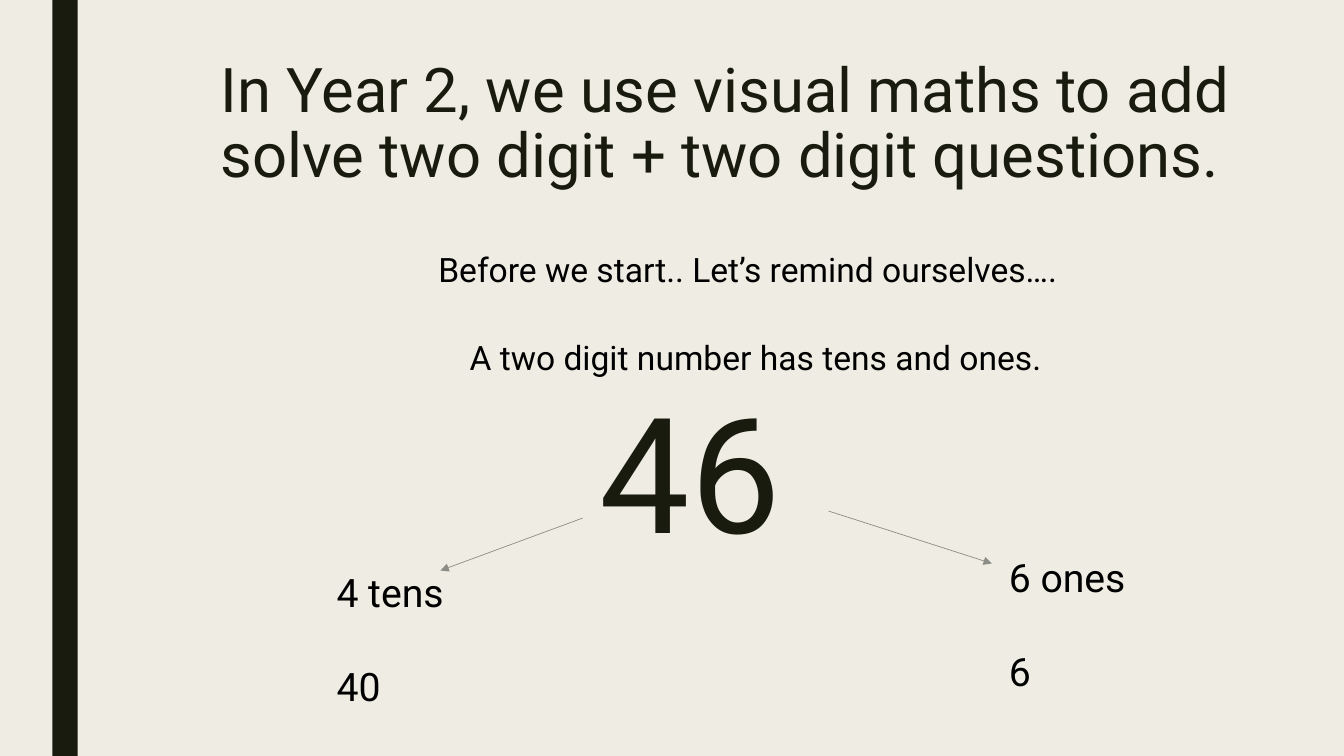
from dataclasses import dataclass

from lxml import etree
from pptx import Presentation
from pptx.dml.color import RGBColor
from pptx.enum.shapes import MSO_CONNECTOR, MSO_SHAPE
from pptx.enum.text import MSO_ANCHOR, PP_ALIGN
from pptx.oxml.ns import qn
from pptx.util import Pt

RECT = MSO_SHAPE.RECTANGLE
STRAIGHT = MSO_CONNECTOR.STRAIGHT
TOP = MSO_ANCHOR.TOP
LEFT = PP_ALIGN.LEFT


@dataclass(frozen=True)
class Theme:
    font: str = "Roboto"
    paper: RGBColor = RGBColor(0xEF, 0xED, 0xE3)
    dark: RGBColor = RGBColor(0x19, 0x1B, 0x0E)
    body: RGBColor = RGBColor(0x00, 0x00, 0x00)
    arrow: RGBColor = RGBColor(0x8C, 0x8D, 0x86)
    title_size: float = 44
    number_size: float = 115
    sentence_size: float = 24
    part_size: float = 28


THEME = Theme()
SLIDE_W, SLIDE_H = 960, 540
HEADING_W, HEADING_H = 756, 116.64
SENTENCE_W, SENTENCE_H = 624.96, 36
PART_W, PART_H = 226.8, 108.72


def add_text(s, box, lines, size, color, line_spacing=1.0, gap=0):
    """Place one paragraph per line in box, with gap points between them."""
    tf = s.shapes.add_textbox(*map(Pt, box)).text_frame
    tf.word_wrap = True
    tf.vertical_anchor = TOP
    tf.text = "\n".join(lines)
    for i, p in enumerate(tf.paragraphs):
        p.alignment = LEFT
        p.line_spacing = line_spacing
        p.space_before = Pt(gap if i else 0)
        font = p.runs[0].font
        font.name, font.size = THEME.font, Pt(size)
        font.color.rgb = color


def add_arrow(s, start, end):
    line = s.shapes.add_connector(STRAIGHT, *map(Pt, (*start, *end)))
    line.line.color.rgb = THEME.arrow
    line.line.width = Pt(0.5)
    etree.SubElement(line.line._get_or_add_ln(), qn("a:tailEnd"), type="triangle")
    etree.SubElement(line._element.spPr, qn("a:effectLst"))


def add_side_bar(s, box):
    bar = s.shapes.add_shape(RECT, *map(Pt, box))
    bar.shadow.inherit = False
    bar.fill.solid()
    bar.fill.fore_color.rgb = THEME.dark
    bar.line.fill.background()


def add_title(s, left, top):
    text = "In Year 2, we use visual maths to add solve two digit + two digit questions."
    add_text(s, (left, top, HEADING_W, HEADING_H), [text],
             THEME.title_size, THEME.dark, line_spacing=0.89)


def add_sentence(s, left, top, text):
    add_text(s, (left, top, SENTENCE_W, SENTENCE_H), [text],
             THEME.sentence_size, THEME.body)


def add_number(s, left, top, number):
    add_text(s, (left, top, HEADING_W, HEADING_H), [number],
             THEME.number_size, THEME.dark, line_spacing=0.79)


def add_part(s, left, top, name, value, arrow_start, arrow_offset):
    """Place a digit's name and value, with an arrow ending offset from the box corner."""
    add_text(s, (left, top, PART_W, PART_H), [name, value],
             THEME.part_size, THEME.body, gap=33.5)
    dx, dy = arrow_offset
    add_arrow(s, arrow_start, (left + dx, top + dy))


def build_place_value_slide(prs):
    s = prs.slides.add_slide(prs.slide_layouts[6])
    s.background.fill.solid()
    s.background.fill.fore_color.rgb = THEME.paper
    add_side_bar(s, (37.44, 0, 18, SLIDE_H))
    add_title(s, 150.48, 38.88)
    add_sentence(s, 306, 174.24, "Before we start.. Let’s remind ourselves….")
    add_number(s, 421.2, 290.16, "46")
    add_sentence(s, 328.32, 236.88, "A two digit number has tens and ones.")
    add_part(s, 233.28, 402.48, "4 tens", "40", (416.16, 370.08), (81.36, 5.04))
    add_part(s, 713.52, 391.68, "6 ones", "6", (591.84, 365.04), (-5.04, 10.8))


def main():
    prs = Presentation()
    prs.slide_width, prs.slide_height = Pt(SLIDE_W), Pt(SLIDE_H)
    build_place_value_slide(prs)
    prs.save("out.pptx")


if __name__ == "__main__":
    main()
